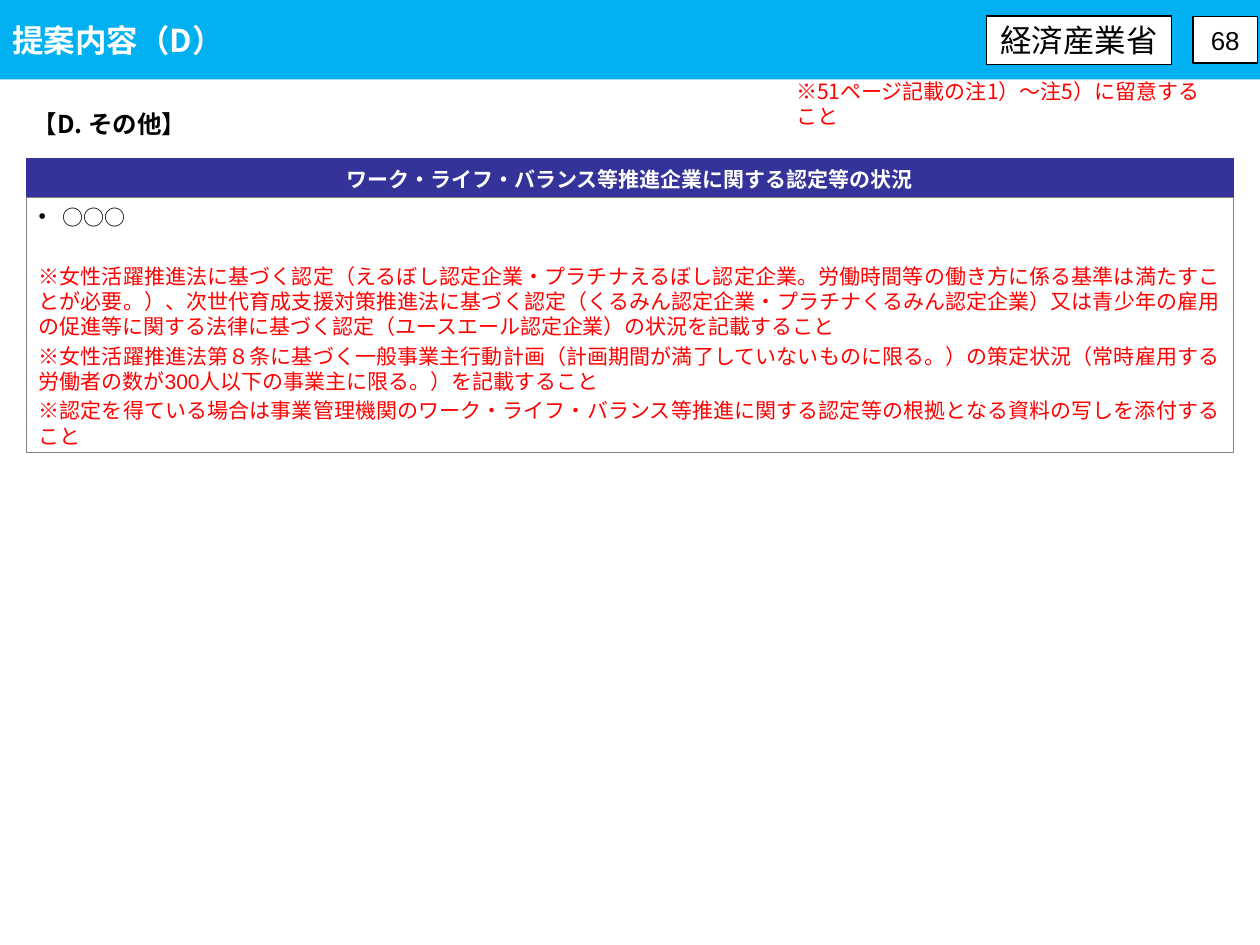
from dataclasses import dataclass

from lxml.etree import SubElement
from pptx import Presentation
from pptx.dml.color import RGBColor
from pptx.enum.shapes import MSO_SHAPE
from pptx.enum.text import MSO_ANCHOR, PP_ALIGN
from pptx.oxml.ns import qn
from pptx.util import Cm, Pt


@dataclass(frozen=True)
class Theme:
    sans: str = "Arial"
    japanese: str = "Noto Sans CJK JP"
    banner: str = "00B0F0"
    heading: str = "333399"
    frame: str = "808080"
    white: str = "FFFFFF"
    black: str = "000000"
    red: str = "FF0000"
    title_size: float = 18
    page_number_size: float = 14.8
    section_size: float = 14
    body_size: float = 12
    paragraph_gap: float = 2.4
    group_gap: float = 19.5


THEME = Theme()

# Content
TITLE = "提案内容（D）"
MINISTRY = "経済産業省"
PAGE_NUMBER = "68"
SECTION = "【D. その他】"
REMINDER = "※51ページ記載の注1）～注5）に留意すること"
HEADING = "ワーク・ライフ・バランス等推進企業に関する認定等の状況"
ENTRY = "○○○"
REQUIREMENTS = [
    "※女性活躍推進法に基づく認定（えるぼし認定企業・プラチナえるぼし認定企業。"
    "労働時間等の働き方に係る基準は満たすことが必要。）、"
    "次世代育成支援対策推進法に基づく認定（くるみん認定企業・プラチナくるみん認定企業）"
    "又は青少年の雇用の促進等に関する法律に基づく認定（ユースエール認定企業）の状況を記載すること",
    "※女性活躍推進法第８条に基づく一般事業主行動計画（計画期間が満了していないものに限る。）"
    "の策定状況（常時雇用する労働者の数が300人以下の事業主に限る。）を記載すること",
    "※認定を得ている場合は事業管理機関のワーク・ライフ・バランス等推進に関する"
    "認定等の根拠となる資料の写しを添付すること",
]

# Layout in centimetres
PAGE_WIDTH, PAGE_HEIGHT = 25.4, 19.05
MARGIN = 0.53
PANEL_WIDTH = PAGE_WIDTH - 2 * MARGIN
HEADING_TOP, HEADING_HEIGHT = 3.2, 0.79
BODY_HEIGHT = 5.13
BULLET_INDENT = 0.48


def color(code):
    return RGBColor.from_string(code)


def prepare_frame(box, anchor):
    frame = box.text_frame
    frame.word_wrap = True
    frame.vertical_anchor = anchor
    return frame


def add_panel(page, area, fill=None, line=None, line_width=0.5, anchor=MSO_ANCHOR.MIDDLE):
    box = page.shapes.add_shape(MSO_SHAPE.RECTANGLE, *map(Cm, area))
    box.shadow.inherit = False
    if fill:
        box.fill.solid()
        box.fill.fore_color.rgb = color(fill)
    else:
        box.fill.background()
    if line:
        box.line.color.rgb = color(line)
        box.line.width = Pt(line_width)
    else:
        box.line.fill.background()
    return prepare_frame(box, anchor)


def add_label(page, area, anchor=MSO_ANCHOR.TOP):
    return prepare_frame(page.shapes.add_textbox(*map(Cm, area)), anchor)


def write(para, text, size, ink, font=THEME.sans, bold=False, align=PP_ALIGN.LEFT):
    para.alignment = align
    span = para.add_run()
    span.text = text
    span.font.size = Pt(size)
    span.font.bold = bold
    span.font.color.rgb = color(ink)
    span.font.name = font
    SubElement(span._r.get_or_add_rPr(), qn("a:ea"), typeface=THEME.japanese)


def add_bullet(para, indent):
    properties = para._p.get_or_add_pPr()
    properties.set("marL", str(Cm(indent)))
    properties.set("indent", str(-Cm(indent)))
    SubElement(properties, qn("a:buFont"), typeface=THEME.sans)
    SubElement(properties, qn("a:buChar"), char="•")


def add_header(page):
    banner = add_panel(page, (0, 0, PAGE_WIDTH, 1.6), THEME.banner)
    write(banner.paragraphs[0], TITLE, THEME.title_size, THEME.white, THEME.japanese, bold=True)

    tags = [
        (MINISTRY, (19.89, 0.33, 3.73, 0.97), THEME.title_size, 1),
        (PAGE_NUMBER, (24.05, 0.33, 1.3, 0.94), THEME.page_number_size, 0.75),
    ]
    for text, area, size, line_width in tags:
        tag = add_panel(page, area, THEME.white, THEME.black, line_width)
        write(tag.paragraphs[0], text, size, THEME.black, align=PP_ALIGN.CENTER)


def add_labels(page):
    section = add_label(page, (0.41, 2.08, 7.7, 0.86))
    write(section.paragraphs[0], SECTION, THEME.section_size, THEME.black,
          THEME.japanese, bold=True)
    reminder = add_label(page, (15.8, 1.7, 9.04, 0.79), MSO_ANCHOR.MIDDLE)
    write(reminder.paragraphs[0], REMINDER, THEME.body_size, THEME.red, THEME.japanese)


def add_certification_panel(page):
    # Heading bar
    heading = add_panel(page, (MARGIN, HEADING_TOP, PANEL_WIDTH, HEADING_HEIGHT),
                        THEME.heading, THEME.heading)
    heading.paragraphs[0].line_spacing = Pt(15)
    write(heading.paragraphs[0], HEADING, THEME.body_size, THEME.white,
          bold=True, align=PP_ALIGN.CENTER)

    # Framed body with the entry and its requirements
    body = add_panel(page, (MARGIN, HEADING_TOP + HEADING_HEIGHT, PANEL_WIDTH, BODY_HEIGHT),
                     line=THEME.frame, anchor=MSO_ANCHOR.TOP)
    entry = body.paragraphs[0]
    add_bullet(entry, BULLET_INDENT)
    write(entry, ENTRY, THEME.body_size, THEME.black, THEME.japanese, align=PP_ALIGN.JUSTIFY)
    for index, requirement in enumerate(REQUIREMENTS):
        para = body.add_paragraph()
        para.space_before = Pt(THEME.paragraph_gap if index else THEME.group_gap)
        write(para, requirement, THEME.body_size, THEME.red, align=PP_ALIGN.JUSTIFY)


def main():
    deck = Presentation()
    deck.slide_width, deck.slide_height = Cm(PAGE_WIDTH), Cm(PAGE_HEIGHT)
    page = deck.slides.add_slide(deck.slide_layouts[6])
    add_header(page)
    add_labels(page)
    add_certification_panel(page)
    deck.save("out.pptx")


if __name__ == "__main__":
    main()
